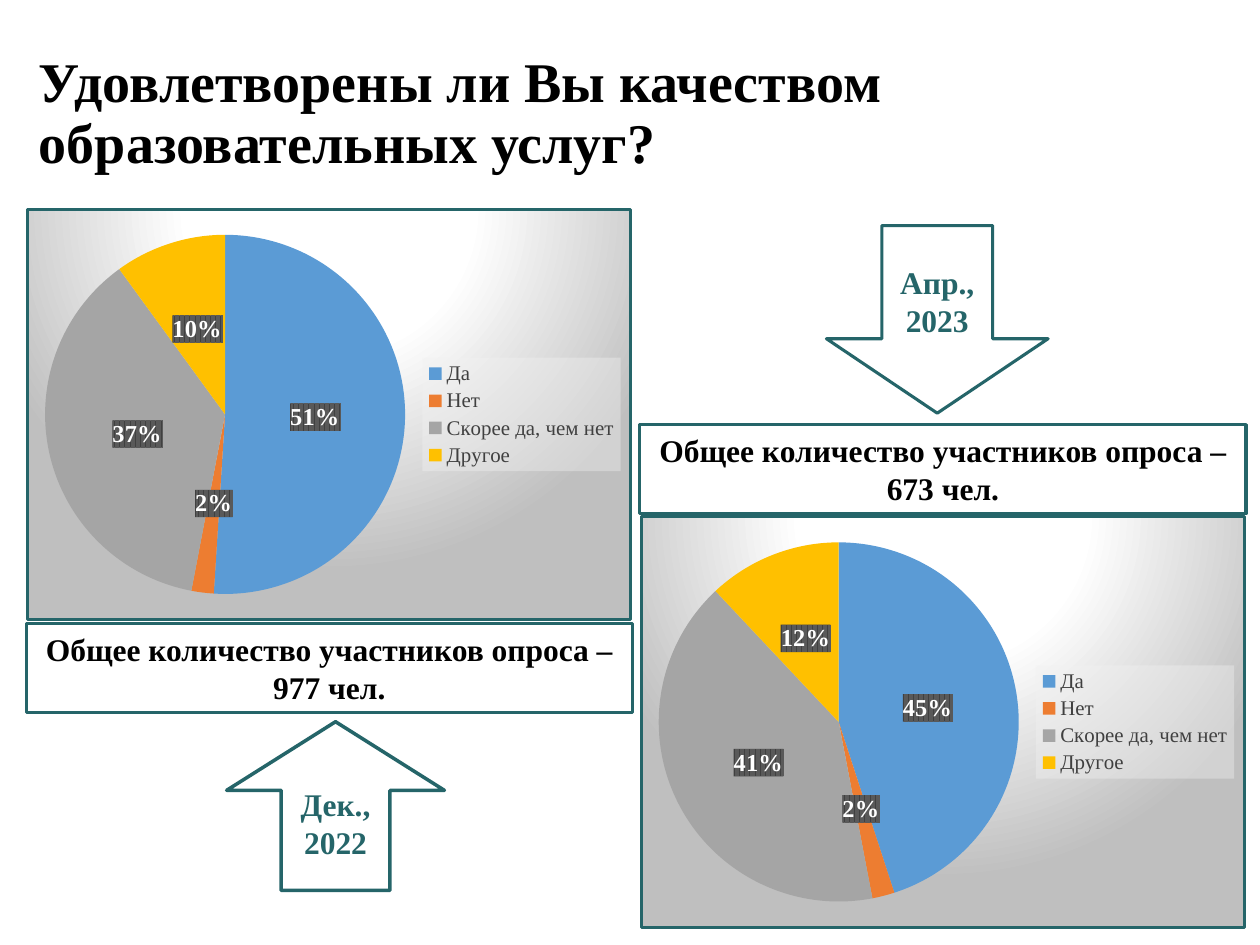
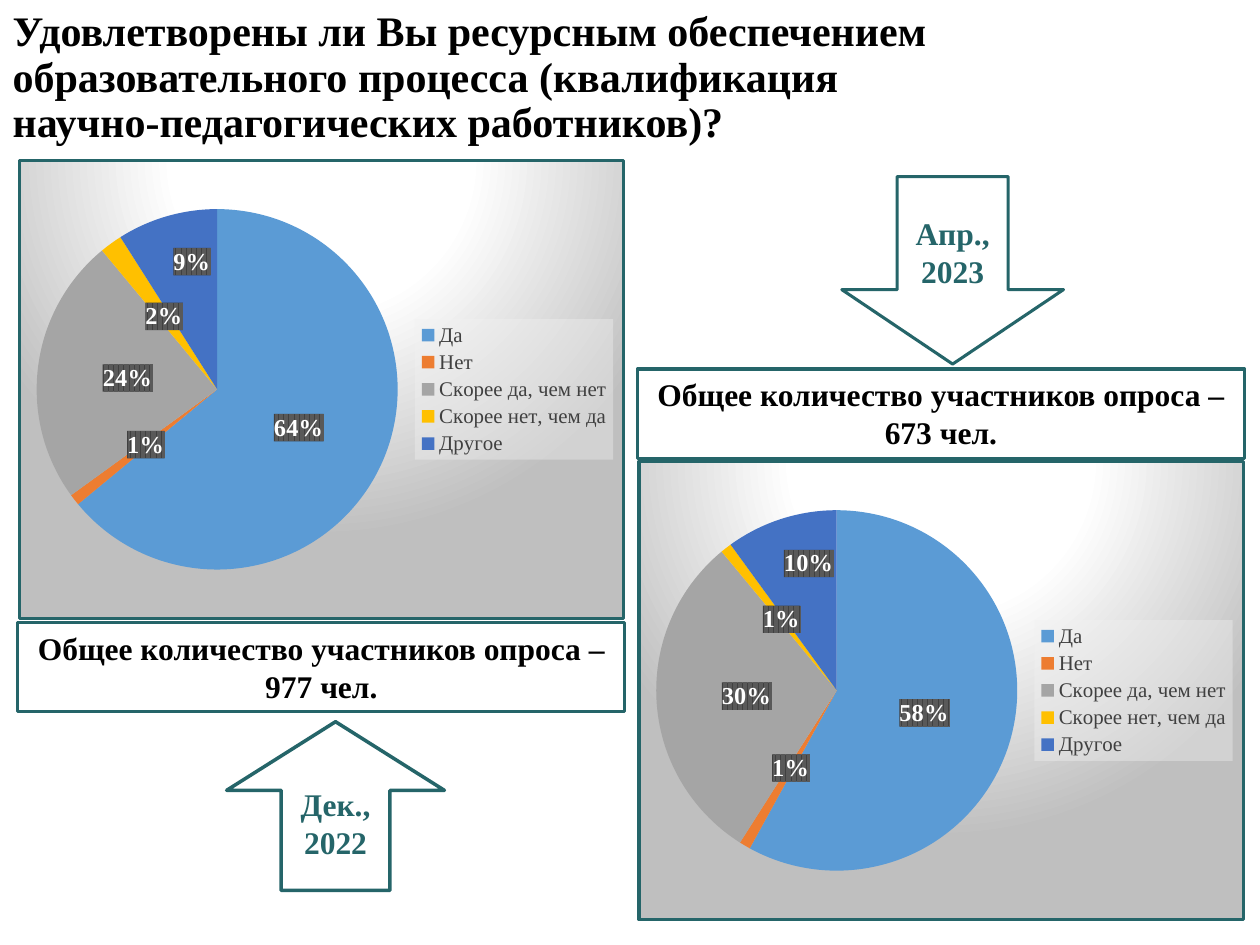
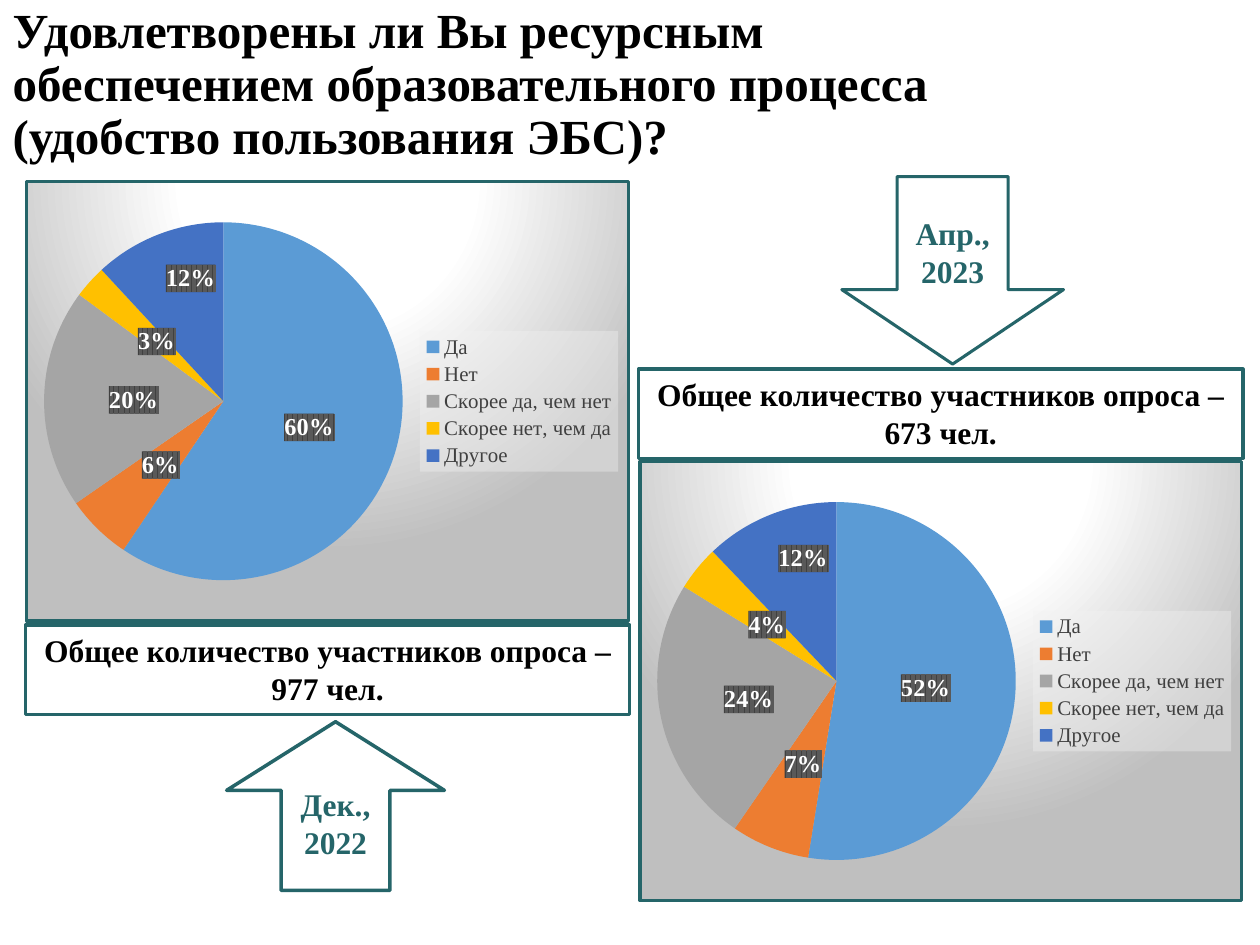
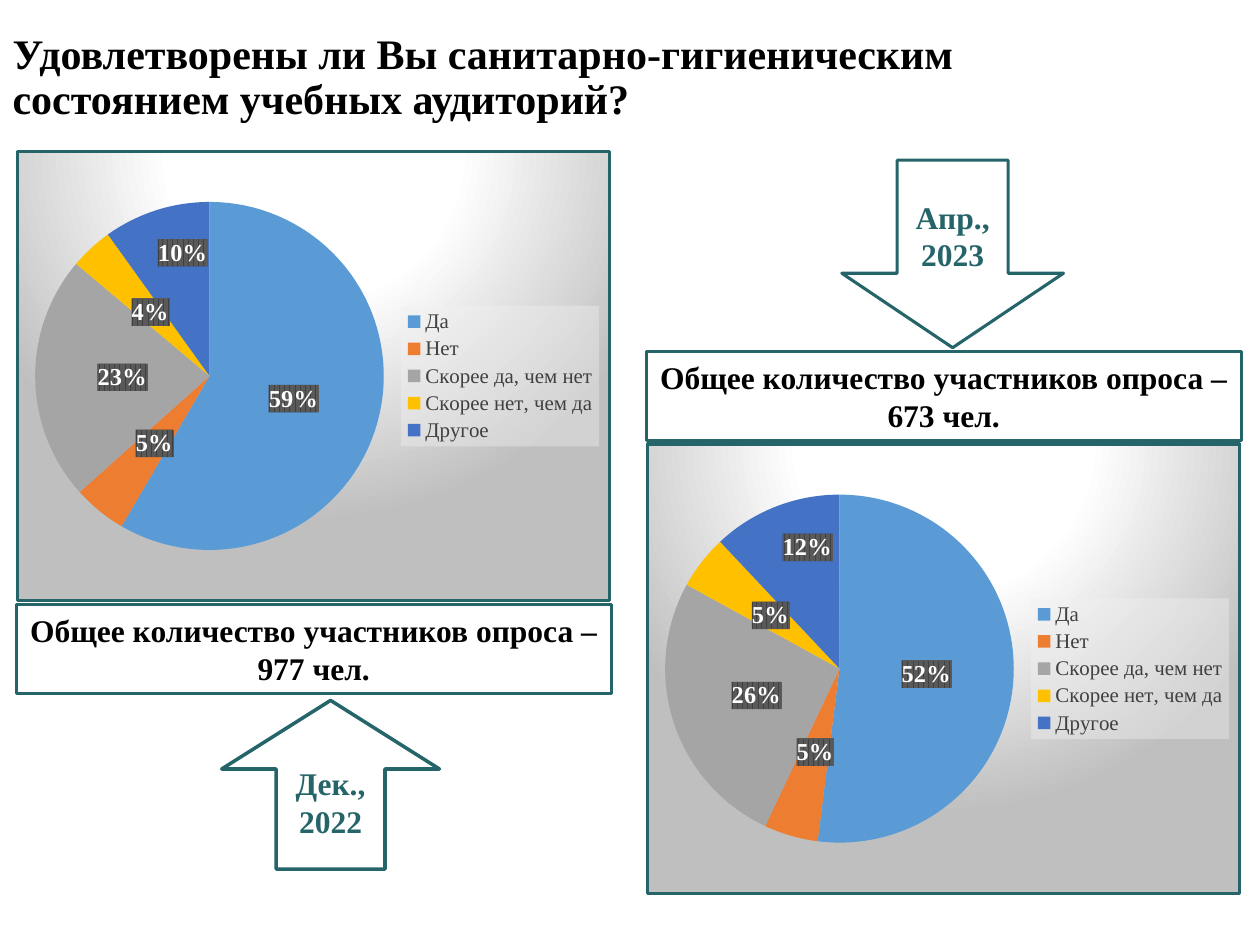
from copy import deepcopy
from dataclasses import dataclass

from pptx import Presentation
from pptx.chart.data import CategoryChartData
from pptx.dml.color import RGBColor
from pptx.enum.chart import XL_CHART_TYPE, XL_LABEL_POSITION, XL_LEGEND_POSITION
from pptx.enum.shapes import MSO_SHAPE
from pptx.enum.text import MSO_ANCHOR, MSO_AUTO_SIZE, PP_ALIGN
from pptx.oxml import parse_xml
from pptx.oxml.ns import nsdecls
from pptx.util import Cm, Pt

PIE = XL_CHART_TYPE.PIE
LABEL_CENTER = XL_LABEL_POSITION.CENTER
LEGEND_RIGHT = XL_LEGEND_POSITION.RIGHT
RECTANGLE, UP_ARROW, DOWN_ARROW = MSO_SHAPE.RECTANGLE, MSO_SHAPE.UP_ARROW, MSO_SHAPE.DOWN_ARROW
TOP, MIDDLE = MSO_ANCHOR.TOP, MSO_ANCHOR.MIDDLE
LEFT, CENTER = PP_ALIGN.LEFT, PP_ALIGN.CENTER
NO_AUTOFIT, GROW = MSO_AUTO_SIZE.NONE, MSO_AUTO_SIZE.SHAPE_TO_FIT_TEXT

BLACK = RGBColor(0x00, 0x00, 0x00)
WHITE = RGBColor(0xFF, 0xFF, 0xFF)
TEAL = RGBColor(0x25, 0x65, 0x69)
LEGEND_GRAY = RGBColor(0x40, 0x40, 0x40)
BLUE = RGBColor(0x5B, 0x9B, 0xD5)
ORANGE = RGBColor(0xED, 0x7D, 0x31)
GRAY = RGBColor(0xA5, 0xA5, 0xA5)
YELLOW = RGBColor(0xFF, 0xC0, 0x00)
INDIGO = RGBColor(0x44, 0x72, 0xC4)
SLICE_COLOURS = (BLUE, ORANGE, GRAY, YELLOW, INDIGO)

FONT = "Times New Roman"
BODY_STYLE = {"name": FONT, "size": Pt(18), "bold": True}
LABEL_STYLE = {"name": FONT, "size": Pt(14), "bold": True}
LEGEND_STYLE = {"name": FONT, "size": Pt(12)}

# Shared lengths in centimetres
TITLE_HEIGHT = 3.02
COUNT_HEIGHT = 1.8
COUNT_GAP = 0.05      # from the December chart down to its count
CHART_OFFSET = 1.83   # from the April count down to its chart
UP_SIZE = (4.39, 3.4)
DOWN_SIZE = (4.47, 3.78)

FIFTH_LABEL_SHIFT = -0.09   # share of the chart height

FOUR_ANSWERS = ("Да", "Нет", "Скорее да, чем нет", "Другое")
FIVE_ANSWERS = ("Да", "Нет", "Скорее да, чем нет", "Скорее нет, чем да", "Другое")

FRAME_FILL = f"""<c:spPr {nsdecls("c", "a")}>
  <a:gradFill><a:gsLst>
    <a:gs pos="0"><a:srgbClr val="FFFFFF"/></a:gs>
    <a:gs pos="39000"><a:srgbClr val="FFFFFF"/></a:gs>
    <a:gs pos="100000"><a:srgbClr val="BFBFBF"/></a:gs>
  </a:gsLst><a:path path="circle">
    <a:fillToRect l="50000" t="-80000" r="50000" b="180000"/>
  </a:path></a:gradFill>
  <a:ln w="22225"><a:solidFill><a:srgbClr val="{TEAL}"/></a:solidFill></a:ln>
</c:spPr>"""
LABEL_FILL = f"""<c:spPr {nsdecls("c", "a")}>
  <a:pattFill prst="dkVert">
    <a:fgClr><a:srgbClr val="595959"/></a:fgClr>
    <a:bgClr><a:srgbClr val="404040"/></a:bgClr>
  </a:pattFill><a:ln><a:noFill/></a:ln>
</c:spPr>"""
LEGEND_FILL = f"""<c:spPr {nsdecls("c", "a")}>
  <a:solidFill><a:srgbClr val="F2F2F2"><a:alpha val="39000"/></a:srgbClr></a:solidFill>
  <a:ln><a:noFill/></a:ln>
</c:spPr>"""


@dataclass
class Question:
    title: str
    title_size: int
    title_at: tuple       # left, top, width
    answers: tuple
    chart_size: tuple
    december: tuple       # percentages
    december_at: tuple    # left and top of the chart
    april: tuple
    april_at: tuple       # left and top of the count
    up_at: tuple
    down_at: tuple


QUESTIONS = (
    Question("Удовлетворены ли Вы качеством образовательных услуг?",
             32, (0.53, 0.8, 17.7), FOUR_ANSWERS, (12.22, 8.33),
             (51, 2, 37, 10), (0.53, 4.19),
             (45, 2, 41, 12), (12.9, 8.56), (4.57, 14.55), (16.66, 4.55)),
    Question("Удовлетворены ли Вы ресурсным обеспечением образовательного процесса "
             "(квалификация научно-педагогических работников)?",
             24, (0, 0.07, 19.48), FIVE_ANSWERS, (12.24, 9.3),
             (64, 1, 24, 2, 9), (0.36, 3.2),
             (58, 1, 30, 1, 10), (12.85, 7.44), (4.57, 14.55), (16.97, 3.56)),
    Question("Удовлетворены ли Вы ресурсным обеспечением образовательного процесса "
             "(удобство пользования ЭБС)?",
             28, (0, 0.22, 19.48), FIVE_ANSWERS, (12.19, 8.92),
             (60, 6, 20, 3, 12), (0.51, 3.63),
             (52, 7, 24, 4, 12), (12.87, 7.44), (4.57, 14.55), (16.97, 3.56)),
    Question("Удовлетворены ли Вы санитарно-гигиеническим состоянием учебных аудиторий?",
             24, (0, 0.07, 21.44), FIVE_ANSWERS, (11.99, 9.12),
             (59, 5, 23, 4, 10), (0.33, 3.02),
             (52, 5, 26, 5, 12), (13.03, 7.09), (4.47, 14.12), (16.97, 3.23)),
)


def set_font(font, style, colour):
    for name, value in style.items():
        setattr(font, name, value)
    font.color.rgb = colour


def write_text(shape, text, style, colour, align, anchor, autosize=NO_AUTOFIT):
    frame = shape.text_frame
    frame.word_wrap = True
    frame.auto_size = autosize
    frame.vertical_anchor = anchor
    para = frame.paragraphs[0]
    para.alignment = align
    span = para.add_run()
    span.text = text
    set_font(span.font, style, colour)
    return para


def set_title(page, question):
    title = page.shapes.title
    title.left, title.top, title.width = (Cm(value) for value in question.title_at)
    title.height = Cm(TITLE_HEIGHT)
    style = {**BODY_STYLE, "size": Pt(question.title_size)}
    para = write_text(title, question.title, style, BLACK, LEFT, MIDDLE)
    para.line_spacing = 0.9


def add_outlined(page, kind, place, size, line_width, fill=None):
    shape = page.shapes.add_shape(kind, *(Cm(value) for value in (*place, *size)))
    shape.shadow.inherit = False
    if fill is None:
        shape.fill.background()
    else:
        shape.fill.solid()
        shape.fill.fore_color.rgb = fill
    shape.line.color.rgb = TEAL
    shape.line.width = Pt(line_width)
    return shape


def add_count(page, place, width, people):
    box = add_outlined(page, RECTANGLE, place, (width, COUNT_HEIGHT), 1.75)
    write_text(box, f"Общее количество участников опроса – {people} чел.",
               BODY_STYLE, BLACK, CENTER, TOP, GROW)


def add_date_arrow(page, kind, place, size, head, line_width, text, fill=None):
    arrow = add_outlined(page, kind, place, size, line_width, fill)
    arrow.adjustments[0], arrow.adjustments[1] = 0.5, head
    write_text(arrow, text, BODY_STYLE, TEAL, CENTER, MIDDLE)


def shift_label(space, index, shift):
    """Move one label vertically, keeping the format of the others."""
    labels = space.xpath(".//c:ser/c:dLbls")[0]
    label = parse_xml(
        f'<c:dLbl {nsdecls("c")}><c:idx val="{index}"/><c:layout><c:manualLayout>'
        f'<c:x val="0"/><c:y val="{shift}"/></c:manualLayout></c:layout></c:dLbl>')
    for part in labels.xpath("*[not(self::c:showLeaderLines)]"):
        label.append(deepcopy(part))
    labels.insert(0, label)


def add_pie(page, place, size, answers, shares):
    data = CategoryChartData()
    data.categories = answers
    data.add_series("Series 1", shares)
    chart = page.shapes.add_chart(
        PIE, *(Cm(value) for value in (*place, *size)), data).chart
    chart.has_title = False
    set_font(chart.font, {"name": "Calibri", "size": Pt(10)}, BLACK)

    # Slices and their labels
    plot = chart.plots[0]
    plot.vary_by_categories = True
    series = plot.series[0]
    for index, colour in enumerate(SLICE_COLOURS[:len(answers)]):
        fill = series.points[index].format.fill
        fill.solid()
        fill.fore_color.rgb = colour
    labels = series.data_labels
    labels.show_value = True
    labels.number_format = '0"%"'
    labels.number_format_is_linked = False
    labels.position = LABEL_CENTER
    set_font(labels.font, LABEL_STYLE, WHITE)

    # Legend
    chart.has_legend = True
    chart.legend.position = LEGEND_RIGHT
    chart.legend.include_in_layout = False
    set_font(chart.legend.font, LEGEND_STYLE, LEGEND_GRAY)

    # Backgrounds of frame, labels and legend
    space = chart.element
    for before, fill in (("c:chart", FRAME_FILL),
                         (".//c:ser/c:dLbls/c:numFmt", LABEL_FILL),
                         (".//c:legend/c:overlay", LEGEND_FILL)):
        space.xpath(before)[0].addnext(parse_xml(fill))
    if not space.xpath("c:roundedCorners"):
        corners = parse_xml(f'<c:roundedCorners {nsdecls("c")} val="0"/>')
        space.xpath("c:chart")[0].addprevious(corners)

    # The fifth label moves up, clear of the narrow fourth slice
    if len(answers) == 5:
        shift_label(space, 4, FIFTH_LABEL_SHIFT)


def add_question(deck, question):
    page = deck.slides.add_slide(deck.slide_layouts[5])
    set_title(page, question)
    width, height = question.chart_size

    # December: chart, count below it, arrow pointing up
    left, top = question.december_at
    add_pie(page, (left, top), question.chart_size, question.answers, question.december)
    add_count(page, (left, top + height + COUNT_GAP), width, 977)
    add_date_arrow(page, UP_ARROW, question.up_at, UP_SIZE, 0.407, 2, "Дек., 2022")

    # April: arrow pointing down, count, chart below it
    left, top = question.april_at
    add_pie(page, (left, top + CHART_OFFSET), question.chart_size,
            question.answers, question.april)
    add_count(page, (left, top), width, 673)
    add_date_arrow(page, DOWN_ARROW, question.down_at, DOWN_SIZE, 0.397, 1.75,
                   "Апр., 2023", WHITE)


def main():
    deck = Presentation()
    deck.slide_width, deck.slide_height = Cm(25.4), Cm(19.05)
    for question in QUESTIONS:
        add_question(deck, question)
    deck.save("out.pptx")


if __name__ == "__main__":
    main()
